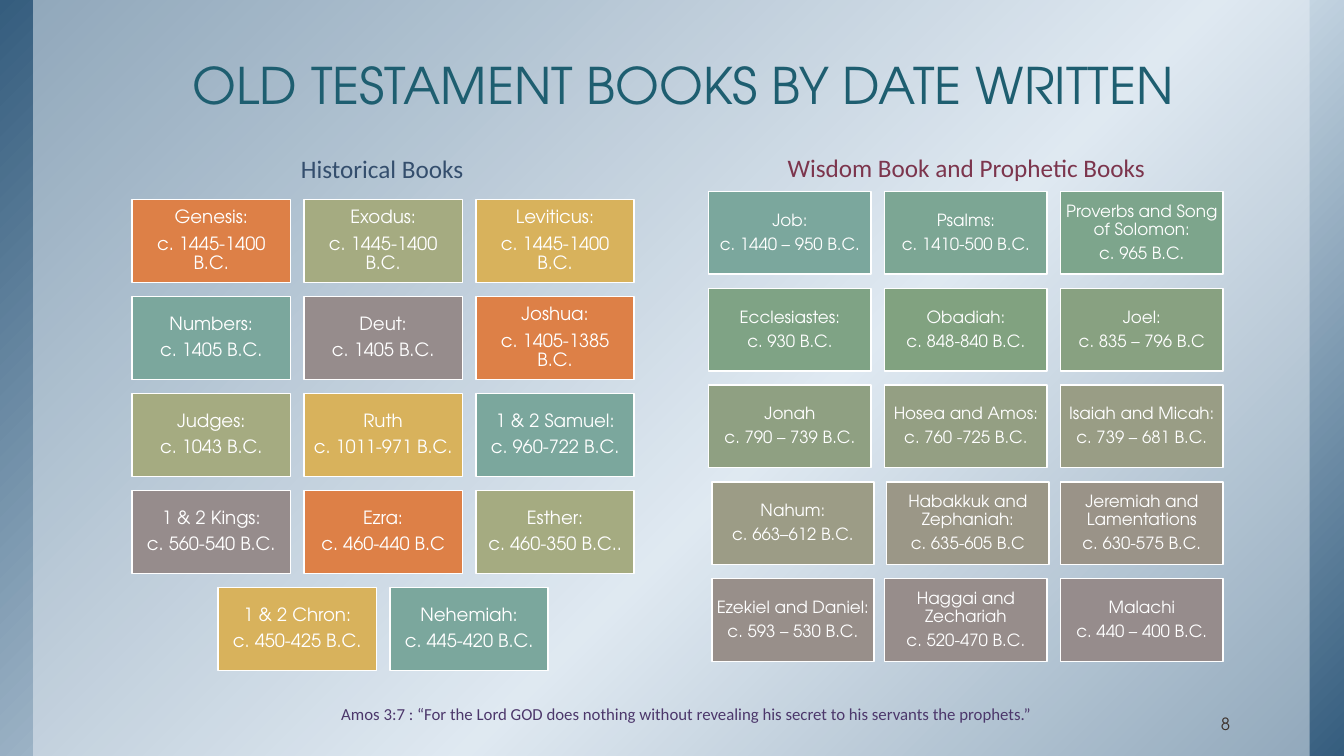
"""Build the slide of Old Testament books by date written."""
from copy import deepcopy
from lxml.etree import SubElement
from pptx import Presentation
from pptx.dml.color import RGBColor
from pptx.enum.shapes import MSO_SHAPE
from pptx.enum.text import MSO_ANCHOR, PP_ALIGN
from pptx.oxml.ns import qn
from pptx.util import Inches, Pt

THEME = {
    "display": "TeX Gyre Adventor", "body": "Calibri",
    "title": "1E5E70", "historical": "344E6D", "prophetic": "7C354D",
    "quote": "4C376B", "number": "3C302A", "white": "FFFFFF", "panel": "EAF0F6",
    "title_size": 36, "heading_size": 18, "small_size": 12, "history_size": 13,
    "backdrop": [(0, "355D7E"), (0.58, "D4E2ED"), (1, "355D7E")],
    "history_fills": ["DD8047", "A5AB81", "D8B25C", "7BA79D", "968C8C"],
    "prophet_fills": [
        "7BA79D", "7CA694", "7DA58C", "7FA385", "81A280", "88A181", "8FA082", "949F83",
        "999D85", "9C9C86", "9B9787", "9A9388", "988F8A", "978D8B", "968C8C"],
}

HISTORICAL = [
    ("Genesis:", "c. 1445-1400 B.C."), ("Exodus:", "c. 1445-1400 B.C."),
    ("Leviticus:", "c. 1445-1400 B.C."), ("Numbers:", "c. 1405 B.C."),
    ("Deut:", "c. 1405 B.C."), ("Joshua:", "c. 1405-1385 B.C."),
    ("Judges:", "c. 1043 B.C."), ("Ruth", "c. 1011-971 B.C."),
    ("1 & 2 Samuel:", "c. 960-722 B.C."), ("1 & 2 Kings:", "c. 560-540 B.C."),
    ("Ezra:", "c. 460-440 B.C"), ("Esther:", "c. 460-350 B.C.."),
    ("1 & 2 Chron:", "c. 450-425 B.C."), ("Nehemiah:", "c. 445-420 B.C."),
]
PROPHETIC = [
    ("Job:", "c. 1440 – 950 B.C."), ("Psalms:", "c. 1410-500 B.C."),
    ("Proverbs and Song of Solomon:", "c. 965 B.C."), ("Ecclesiastes:", "c. 930 B.C."),
    ("Obadiah:", "c. 848-840 B.C."), ("Joel:", "c. 835 – 796 B.C"),
    ("Jonah", "c. 790 – 739 B.C."), ("Hosea and Amos:", "c. 760 -725 B.C."),
    ("Isaiah and Micah:", "c. 739 – 681 B.C."), ("Nahum:", "c. 663–612 B.C."),
    ("Habakkuk and Zephaniah:", "c. 635-605 B.C"),
    ("Jeremiah and Lamentations", "c. 630-575 B.C."),
    ("Ezekiel and Daniel:", "c. 593 – 530 B.C."),
    ("Haggai and Zechariah", "c. 520-470 B.C."), ("Malachi", "c. 440 – 400 B.C."),
]
GRIDS = [
    {"books": HISTORICAL, "fills": "history_fills", "size": "history_size",
     "left": 1.31, "last_left": 4.72, "top": 1.98, "last_top": 5.83, "width": 1.57,
     "nudges": {}},
    {"books": PROPHETIC, "fills": "prophet_fills", "size": "small_size",
     "left": 7.03, "last_left": 10.52, "top": 1.9, "last_top": 5.74, "width": 1.61,
     "nudges": {9: 0.03, 10: 0.02, 12: 0.03}},
]
COLUMNS, ROWS, BOX_HEIGHT = 3, 5, 0.82

WIDE_MARGINS, QUOTE_MARGINS, BOX_MARGINS = (0.13, 0.07), (0.1, 0.05), (0.05, 0.05)
CENTER, RIGHT = PP_ALIGN.CENTER, PP_ALIGN.RIGHT
LABELS = [
    ("OLD TESTAMENT BOOKS BY DATE WRITTEN", (1.22, 0.29, 11.11, 0.92), "display",
     "title_size", "title", CENTER, 0.85, MSO_ANCHOR.BOTTOM, WIDE_MARGINS),
    ("Historical Books", (1.33, 1.33, 4.92, 0.56), "body",
     "heading_size", "historical", CENTER, 1.0, MSO_ANCHOR.BOTTOM, WIDE_MARGINS),
    ("Wisdom Book and Prophetic Books", (7, 1.33, 5.17, 0.56), "body",
     "heading_size", "prophetic", CENTER, 0.95, MSO_ANCHOR.BOTTOM, WIDE_MARGINS),
    ("8", (11.12, 7, 1.21, 0.35), "display",
     "small_size", "number", RIGHT, 1.0, MSO_ANCHOR.BOTTOM, WIDE_MARGINS),
    ("Amos 3:7 : “For the Lord GOD does nothing without revealing his secret to his "
     "servants the prophets.”", (1.37, 6.93, 10.88, 0.3), "body",
     "small_size", "quote", CENTER, 1.0, MSO_ANCHOR.TOP, QUOTE_MARGINS),
]


def color(name):
    return RGBColor.from_string(THEME.get(name, name))


def apply(target, values):
    for name, value in values.items():
        setattr(target, name, value)


def write(shape, lines, font, size, ink, align, spacing, anchor, margins, after=0):
    frame = shape.text_frame
    across, down = map(Inches, margins)
    apply(frame, {"word_wrap": True, "vertical_anchor": anchor, "margin_left": across,
                  "margin_right": across, "margin_top": down, "margin_bottom": down})
    for index, line in enumerate(lines):
        para = frame.add_paragraph() if index else frame.paragraphs[0]
        apply(para, {"alignment": align, "line_spacing": spacing, "space_after": Pt(after)})
        span = para.add_run()
        span.text = line
        apply(span.font, {"name": THEME[font], "size": Pt(THEME[size])})
        span.font.color.rgb = color(ink)


def add_rectangle(page, place):
    shape = page.shapes.add_shape(MSO_SHAPE.RECTANGLE, *map(Inches, place))
    shape.shadow.inherit = False
    return shape


def add_backdrop(page):
    backdrop = add_rectangle(page, (0, 0, 13.33, 7.5))
    backdrop.line.fill.background()
    backdrop.fill.gradient()
    backdrop.fill.gradient_angle = 315
    first = backdrop.fill.gradient_stops[0]
    stop_list = backdrop.fill._xPr.find(qn("a:gradFill")).find(qn("a:gsLst"))
    stop_list.append(deepcopy(stop_list[0]))
    for stop, (position, tint) in zip(backdrop.fill.gradient_stops, THEME["backdrop"]):
        stop.position = position
        stop.color.rgb = color(tint)

    panel = add_rectangle(page, (0.33, 0, 12.66, 7.5))
    panel.line.fill.background()
    panel.fill.solid()
    panel.fill.fore_color.rgb = color("panel")
    tint = panel.fill._xPr.find(qn("a:solidFill"))[0]
    SubElement(tint, qn("a:alpha"), val="50000")


def add_grid(page, grid):
    books, fills = grid["books"], THEME[grid["fills"]]
    across = (grid["last_left"] - grid["left"]) / (COLUMNS - 1)
    down = (grid["last_top"] - grid["top"]) / (ROWS - 1)
    for index, lines in enumerate(books):
        row, column = divmod(index, COLUMNS)
        missing = max(0, (row + 1) * COLUMNS - len(books))
        left = grid["left"] + (column + missing / 2) * across + grid["nudges"].get(index, 0)
        box = add_rectangle(page, (left, grid["top"] + row * down, grid["width"], BOX_HEIGHT))
        box.fill.solid()
        box.fill.fore_color.rgb = color(fills[index % len(fills)])
        box.line.color.rgb = color("white")
        box.line.width = Pt(1)
        write(box, lines, "display", grid["size"], "white", CENTER, 0.9,
              MSO_ANCHOR.MIDDLE, BOX_MARGINS, after=0.35 * THEME[grid["size"]])


def main():
    deck = Presentation()
    apply(deck, {"slide_width": Inches(13.33), "slide_height": Inches(7.5)})
    page = deck.slides.add_slide(deck.slide_layouts[6])
    add_backdrop(page)
    for text, place, *style in LABELS:
        write(page.shapes.add_textbox(*map(Inches, place)), [text], *style)
    for grid in GRIDS:
        add_grid(page, grid)
    deck.save("out.pptx")


if __name__ == "__main__":
    main()
